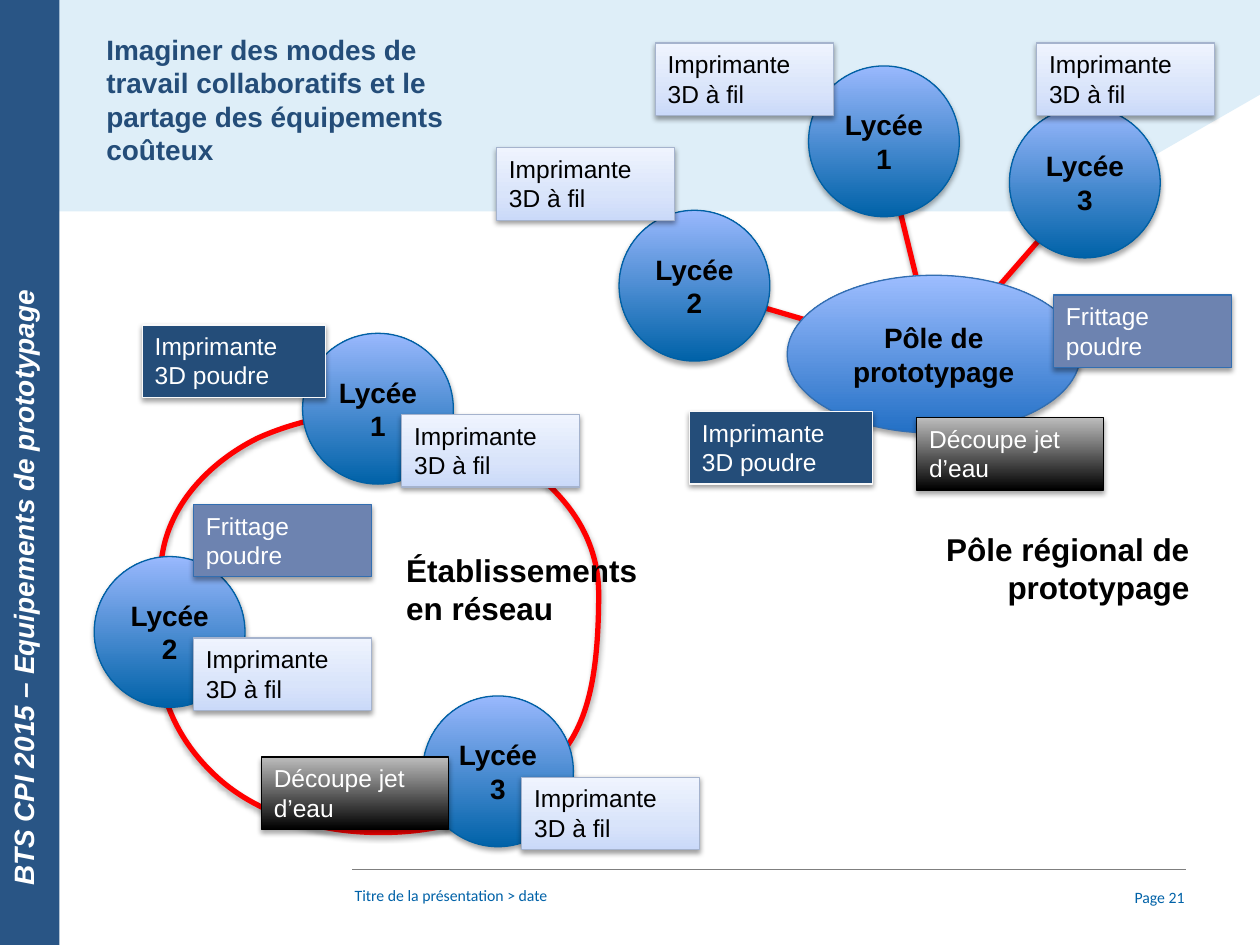
from copy import deepcopy

from lxml.etree import SubElement
from pptx import Presentation
from pptx.dml.color import RGBColor
from pptx.enum.shapes import MSO_CONNECTOR, MSO_SHAPE
from pptx.enum.text import MSO_ANCHOR as Anchor, MSO_AUTO_SIZE, PP_ALIGN as Align
from pptx.oxml.ns import qn
from pptx.util import Cm, Pt

# fill: one colour, or gradient stops from bottom to top
THEME = {
    "font": "Arial", "footer_font": "Calibri",
    "heading": 18, "body": 16, "label": 14, "footer": 9,
    "black": "000000", "white": "FFFFFF", "title": "244D79", "footer_ink": "0062A8",
    "band": "DEEEF8", "sidebar": "295585", "rule": "7F7F7F", "link": "FF0000",
    "styles": {
        "lycee": {"fill": [(0, "0062A8"), (1, "99B8FD")], "line": "0060A4", "shadow": (35, 1.8)},
        "pole": {"fill": [(0, "2370C5"), (1, "9DBDFF")], "line": "326EB1", "shadow": (35, 1.8)},
        "fil": {"fill": [(0, "CAD9F9"), (0.35, "D9E4FA"), (1, "EFF4FE")], "line": "A5B3CD",
                "ink": "000000", "shadow": (38, 1.6)},
        "poudre": {"fill": "244D79", "line": "F9F9F9", "ink": "FFFFFF", "shadow": (38, 1.6)},
        "frittage": {"fill": "6D83B0", "line": "326EB1", "ink": "FFFFFF", "shadow": (38, 1.6)},
        "jet": {"fill": [(0, "000000"), (1, "BDBDBD")], "line": "000000",
                "ink": "FFFFFF", "shadow": (35, 1.8)},
    },
}

# Content; every length is in centimetres
TITLE = "Imaginer des modes de travail collaboratifs et le partage des équipements coûteux"
SIDEBAR = "BTS CPI 2015 – Equipements de prototypage"
FOOTER, PAGE = "Titre de la présentation > date", "Page 21"
EQUIPMENT = {  # text, width
    "fil": ("Imprimante 3D à fil", 3.59),
    "poudre": ("Imprimante 3D poudre", 3.69),
    "frittage": ("Frittage poudre", 3.59),
    "jet": ("Découpe jet d’eau", 3.77),
}
NETWORK_NAME = ["Établissements", "en réseau"]
NETWORK = [("Lycée 1", 6.1, 6.72), ("Lycée 2", 1.9, 11.22), ("Lycée 3", 8.52, 14.03)]
NETWORK_EQUIPMENT = [("poudre", 2.87, 6.55), ("jet", 5.27, 15.26), ("frittage", 3.9, 10.17)]
POLE_NAME = ["Pôle régional de prototypage"]
POLE = ("Pôle de prototypage", 15.87, 5.55, 5.91, 3.18)
POLE_HUB = (18.87, 7.22)
POLE_MEMBERS = [  # name, circle position, printer position, start of link
    ("Lycée 1", (16.3, 1.33), (13.21, 0.87), (17.83, 2.97)),
    ("Lycée 2", (12.48, 4.24), (10.01, 2.98), (13.92, 5.77)),
    ("Lycée 3", (20.35, 2.16), (20.9, 0.87), (21.87, 3.78)),
]
POLE_EQUIPMENT = [("poudre", 13.9, 8.3), ("jet", 18.48, 8.42), ("frittage", 21.24, 5.95)]
CIRCLE, BOX_HEIGHT = 3.04, 1.46
PRINTER_OFFSET = (2, 1.64)
BAND = [(25.4, 0), (0, 0), (0, 4.26), (21.31, 4.26), (25.4, 1.91)]
LOOP_BOX = (3.15, 8.31, 8.92, 8.48)
LOOP_START = (5.18, 8.84)
LOOP_CURVES = [  # two control points and an end
    ((4.22, 9.32), (3.35, 10.21), (3.25, 11.35)),
    ((3.12, 12.52), (2.82, 14.33), (4.47, 15.75)),
    ((6.15, 17.17), (9.12, 16.97), (10.29, 16.1)),
    ((11.48, 15.24), (12.07, 14.66), (12.07, 11.94)),
    ((12.04, 10.03), (10.24, 9.07), (9.09, 8.56)),
    ((7.95, 8.03), (6.17, 8.38), LOOP_START),
]


def rgb(colour):
    return RGBColor.from_string(colour)


def paint(shape, fill=None, line=None, width=0.75, shadow=None):
    shape.shadow.inherit = False
    if isinstance(fill, list):
        shape.fill.gradient()
        shape.fill.gradient_angle = 90
        stop_list = shape._element.spPr.find(".//" + qn("a:gsLst"))
        for _ in fill[len(stop_list):]:
            stop_list.append(deepcopy(stop_list[0]))
        for stop, (position, colour) in zip(shape.fill.gradient_stops, fill):
            stop.position = position
            stop.color.rgb = rgb(colour)
    elif fill:
        shape.fill.solid()
        shape.fill.fore_color.rgb = rgb(fill)
    else:
        shape.fill.background()
    if line:
        shape.line.color.rgb = rgb(line)
        shape.line.width = Pt(width)
    else:
        shape.line.fill.background()
    if shadow:
        add_shadow(shape._element.spPr.find(qn("a:effectLst")), *shadow)


def add_shadow(effects, opacity, distance):
    outer = SubElement(effects, qn("a:outerShdw"), blurRad=str(Pt(3.1)),
                       dist=str(Pt(distance)), dir="5400000", rotWithShape="0")
    colour = SubElement(outer, qn("a:srgbClr"), val=THEME["black"])
    SubElement(colour, qn("a:alpha"), val=str(opacity * 1000))


def write(shape, lines, size, ink=THEME["black"], align=Align.LEFT, anchor=Anchor.TOP,
          font=THEME["font"], bold=False, italic=False):
    frame = shape.text_frame
    frame.text = "\n".join(lines)
    frame_format = {"word_wrap": True, "auto_size": MSO_AUTO_SIZE.NONE, "vertical_anchor": anchor}
    for key, value in frame_format.items():
        setattr(frame, key, value)
    font_format = {"name": font, "size": Pt(THEME[size]), "bold": bold, "italic": italic}
    for paragraph in frame.paragraphs:
        paragraph.alignment = align
        for key, value in font_format.items():
            setattr(paragraph.font, key, value)
        paragraph.font.color.rgb = rgb(ink)


def add_line(shapes, start, end, colour, width, shadow=None):
    line = shapes.add_connector(MSO_CONNECTOR.STRAIGHT, *map(Cm, start + end))
    line.line.color.rgb = rgb(colour)
    line.line.width = Pt(width)
    effects = SubElement(line._element.spPr, qn("a:effectLst"))
    if shadow:
        add_shadow(effects, *shadow)


def add_outline(shapes, points, **look):
    start, *rest = [tuple(map(Cm, point)) for point in points]
    builder = shapes.build_freeform(*start)
    builder.add_line_segments(rest, close=True)
    outline = builder.convert_to_shape()
    paint(outline, **look)
    return outline


def add_loop(shapes, start, curves, box, **look):
    """Closed chain of cubic Bézier curves that fills the given box."""
    loop = add_outline(shapes, [start] + [curve[-1] for curve in curves[:-1]], **look)
    left, top, width, height = map(Cm, box)
    loop.left, loop.top, loop.width, loop.height = left, top, width, height
    route = loop._element.spPr.find(".//" + qn("a:path"))
    route.set("w", str(width))
    route.set("h", str(height))
    for segment in list(route):
        route.remove(segment)
    for kind, points in [("a:moveTo", [start])] + [("a:cubicBezTo", curve) for curve in curves]:
        segment = SubElement(route, qn(kind))
        for x, y in points:
            SubElement(segment, qn("a:pt"), x=str(Cm(x) - left), y=str(Cm(y) - top))
    SubElement(route, qn("a:close"))


def add_site(shapes, name, x, y, width=CIRCLE, height=CIRCLE, style="lycee"):
    site = shapes.add_shape(MSO_SHAPE.OVAL, *map(Cm, (x, y, width, height)))
    paint(site, **THEME["styles"][style])
    write(site, [name], "body", align=Align.CENTER, anchor=Anchor.MIDDLE, bold=True)


def add_equipment(shapes, kind, x, y):
    text, width = EQUIPMENT[kind]
    look = dict(THEME["styles"][kind])
    ink = look.pop("ink")
    box = shapes.add_shape(MSO_SHAPE.RECTANGLE, *map(Cm, (x, y, width, BOX_HEIGHT)))
    paint(box, **look)
    write(box, [text], "label", ink)


def add_text(shapes, place, lines, size, **look):
    write(shapes.add_textbox(*map(Cm, place)), lines, size, **look)


def main():
    deck = Presentation()
    deck.slide_width, deck.slide_height = Cm(25.4), Cm(19.05)
    slide = deck.slides.add_slide(deck.slide_layouts[5])
    shapes = slide.shapes

    add_outline(shapes, BAND, fill=THEME["band"])
    footer_look = {"font": THEME["footer_font"], "ink": THEME["footer_ink"]}
    add_text(shapes, (6.9, 17.73, 15.01, 1.02), [FOOTER], "footer", **footer_look)
    add_line(shapes, (7.1, 17.53), (23.9, 17.53), THEME["rule"], 0.5)
    add_text(shapes, (21.89, 17.65, 2.24, 0.86), [PAGE], "footer",
             align=Align.RIGHT, anchor=Anchor.MIDDLE, **footer_look)

    for *_, link_start in POLE_MEMBERS:
        add_line(shapes, link_start, POLE_HUB, THEME["link"], 3, (38, 1.6))
    add_loop(shapes, LOOP_START, LOOP_CURVES, LOOP_BOX,
             line=THEME["link"], width=3, shadow=(35, 1.8))

    sidebar = shapes.add_shape(MSO_SHAPE.RECTANGLE, 0, 0, Cm(1.2), deck.slide_height)
    paint(sidebar, THEME["sidebar"])
    write(sidebar, [SIDEBAR], "body", THEME["white"], bold=True, italic=True)
    sidebar.text_frame.margin_bottom = Cm(1.19)
    sidebar.text_frame._txBody.bodyPr.set("vert", "vert270")

    for name, x, y in NETWORK:
        add_site(shapes, name, x, y)
        add_equipment(shapes, "fil", x + PRINTER_OFFSET[0], y + PRINTER_OFFSET[1])
    for item in NETWORK_EQUIPMENT:
        add_equipment(shapes, *item)
    add_text(shapes, (7.94, 10.99, 7.14, 1.8), NETWORK_NAME, "heading", bold=True)

    for name, circle, printer, _ in POLE_MEMBERS:
        add_site(shapes, name, *circle)
        add_equipment(shapes, "fil", *printer)
    add_text(shapes, (17.09, 10.57, 7.14, 1.8), POLE_NAME, "heading",
             align=Align.RIGHT, bold=True)
    add_site(shapes, *POLE, style="pole")
    for item in POLE_EQUIPMENT:
        add_equipment(shapes, *item)

    title = shapes.title
    title.left, title.top, title.width, title.height = map(Cm, (1.89, 0.52, 7.39, 3))
    write(title, [TITLE], "body", THEME["title"], bold=True)
    shapes._spTree.append(title._element)  # in front of the band
    deck.save("out.pptx")


if __name__ == "__main__":
    main()
